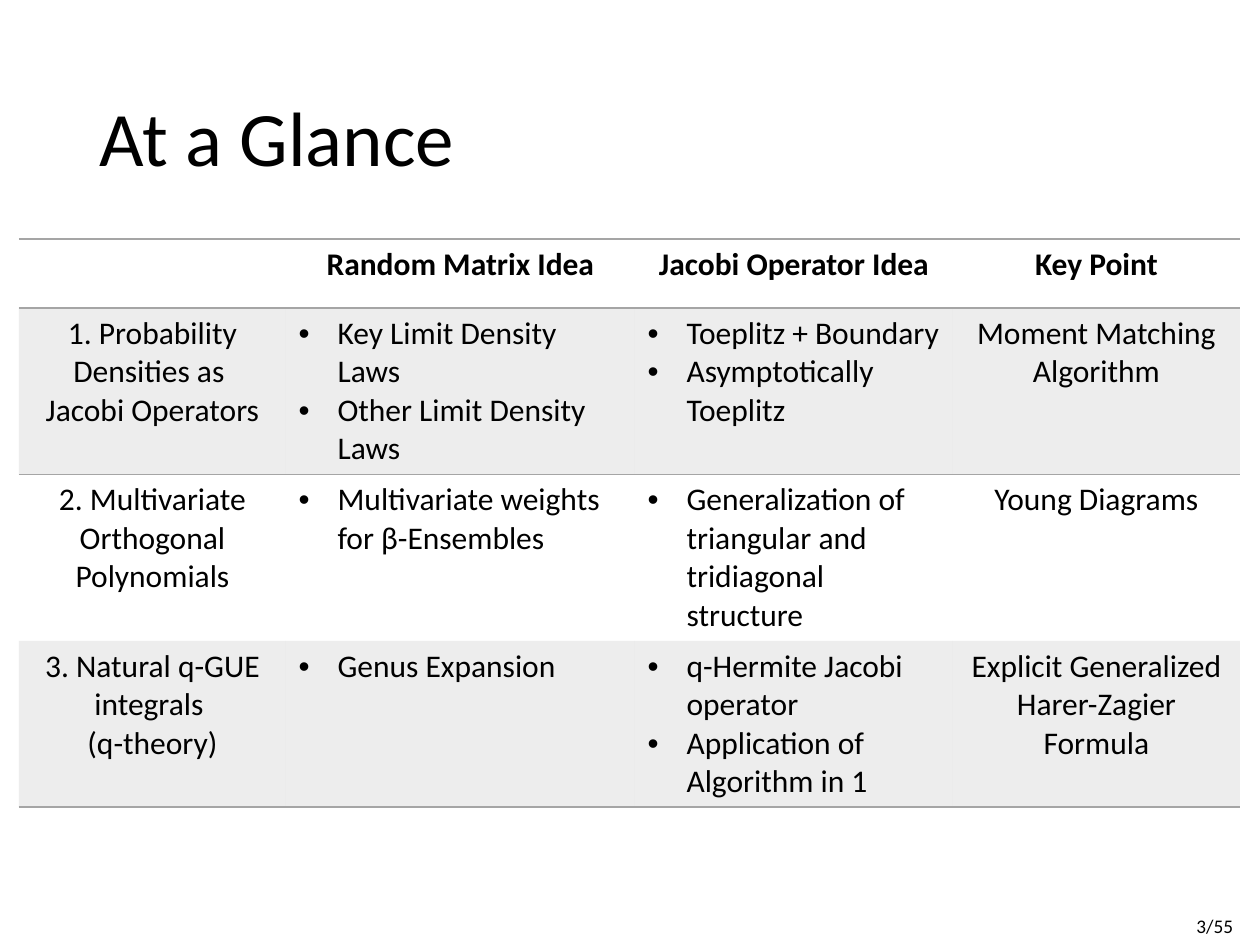
from dataclasses import dataclass

from lxml import etree
from pptx import Presentation
from pptx.dml.color import RGBColor
from pptx.enum.text import MSO_ANCHOR, PP_ALIGN
from pptx.oxml.ns import qn
from pptx.util import Pt

LEFT, CENTER = PP_ALIGN.LEFT, PP_ALIGN.CENTER
MIDDLE = MSO_ANCHOR.MIDDLE

TITLE = "At a Glance"
PAGE_NUMBER = "3/55"
HEADERS = ["", "Random Matrix Idea", "Jacobi Operator Idea", "Key Point"]
TOPICS = [
    (
        ["1. Probability Densities as ", "Jacobi Operators"],
        ["Key Limit Density Laws", "Other Limit Density Laws"],
        ["Toeplitz + Boundary", "Asymptotically Toeplitz"],
        ["Moment Matching Algorithm"],
    ),
    (
        ["2. Multivariate Orthogonal Polynomials"],
        ["Multivariate weights for β-Ensembles"],
        ["Generalization of triangular and tridiagonal structure"],
        ["Young Diagrams"],
    ),
    (
        ["3. Natural q-GUE integrals ", "(q-theory)"],
        ["Genus Expansion"],
        ["q-Hermite Jacobi operator", "Application of Algorithm in 1"],
        ["Explicit Generalized Harer-Zagier Formula"],
    ),
]
BULLET_COLUMNS = (1, 2)

PAGE_SIZE = (1260, 945)
TITLE_BOX = (87, 50, 1086, 183)
NUMBER_BOX = (1184, 908, 76, 37)
TABLE_ORIGIN = (19, 239)
COLUMN_WIDTHS = [267, 349, 318, 287]
ROW_HEIGHTS = [69] + [166] * len(TOPICS)
BULLET_INDENT = 39


@dataclass(frozen=True)
class Theme:
    font: str = "Calibri"
    ink: str = "000000"
    gray: str = "A5A5A5"
    band_alpha: int = 20
    title_size: int = 44
    table_size: int = 18
    number_size: int = 11
    rule_width: int = 1


THEME = Theme()
NO_GRID_STYLE = "{2D5ABB26-0587-4C30-8999-92F81FD0307C}"


def px(length):
    return round(length * 914400 / 126)


def place(shape, frame):
    shape.left, shape.top, shape.width, shape.height = map(px, frame)


def write(para, text, size, align=LEFT, bold=False):
    para.alignment = align
    span = para.add_run()
    span.text = text
    span.font.name = THEME.font
    span.font.size = Pt(size)
    span.font.bold = bold
    span.font.color.rgb = RGBColor.from_string(THEME.ink)


def add_bullet(para):
    properties = para._p.get_or_add_pPr()
    properties.set("marL", str(px(BULLET_INDENT)))
    properties.set("indent", str(-px(BULLET_INDENT)))
    etree.SubElement(properties, qn("a:buFont"), typeface="Arial")
    etree.SubElement(properties, qn("a:buChar"), char="•")


def shade(cell):
    cell.fill.solid()
    cell.fill.fore_color.rgb = RGBColor.from_string(THEME.gray)
    color = cell._tc.tcPr.find(".//" + qn("a:srgbClr"))
    etree.SubElement(color, qn("a:alpha"), val=str(THEME.band_alpha * 1000))


def add_rules(cell, sides):
    properties = cell._tc.get_or_add_tcPr()
    for position, side in enumerate(sides):
        line = etree.Element(qn("a:ln" + side), w=str(Pt(THEME.rule_width)))
        fill = etree.SubElement(line, qn("a:solidFill"))
        etree.SubElement(fill, qn("a:srgbClr"), val=THEME.gray)
        properties.insert(position, line)


def fill_cell(cell, lines, bulleted, header):
    for number, text in enumerate(lines):
        frame = cell.text_frame
        para = frame.add_paragraph() if number else frame.paragraphs[0]
        if bulleted:
            add_bullet(para)
        write(para, text, THEME.table_size, LEFT if bulleted else CENTER, header)


def add_overview(page):
    rows = [[[text] if text else [] for text in HEADERS], *TOPICS]
    size = (sum(COLUMN_WIDTHS), sum(ROW_HEIGHTS))
    table = page.shapes.add_table(
        len(rows), len(HEADERS), *map(px, TABLE_ORIGIN + size)
    ).table
    table.first_row = table.horz_banding = False
    table._tbl.tblPr.find(qn("a:tableStyleId")).text = NO_GRID_STYLE
    for column, width in zip(table.columns, COLUMN_WIDTHS):
        column.width = px(width)
    rules = {0: "TB", 1: "T", len(rows) - 1: "B"}
    for r, (row, height) in enumerate(zip(rows, ROW_HEIGHTS)):
        table.rows[r].height = px(height)
        for c, lines in enumerate(row):
            cell = table.cell(r, c)
            fill_cell(cell, lines, r > 0 and c in BULLET_COLUMNS, r == 0)
            if r % 2:
                shade(cell)
            else:
                cell.fill.background()
            add_rules(cell, rules.get(r, ""))


def main():
    deck = Presentation()
    deck.slide_width, deck.slide_height = map(px, PAGE_SIZE)
    page = deck.slides.add_slide(deck.slide_layouts[5])

    title = page.shapes.title
    place(title, TITLE_BOX)
    title.text_frame.vertical_anchor = MIDDLE
    heading = title.text_frame.paragraphs[0]
    heading.line_spacing = 0.9
    write(heading, TITLE, THEME.title_size)

    add_overview(page)

    number_box = page.shapes.add_textbox(*map(px, NUMBER_BOX))
    number_box.text_frame.word_wrap = False
    write(number_box.text_frame.paragraphs[0], PAGE_NUMBER, THEME.number_size)

    deck.save("out.pptx")


if __name__ == "__main__":
    main()
